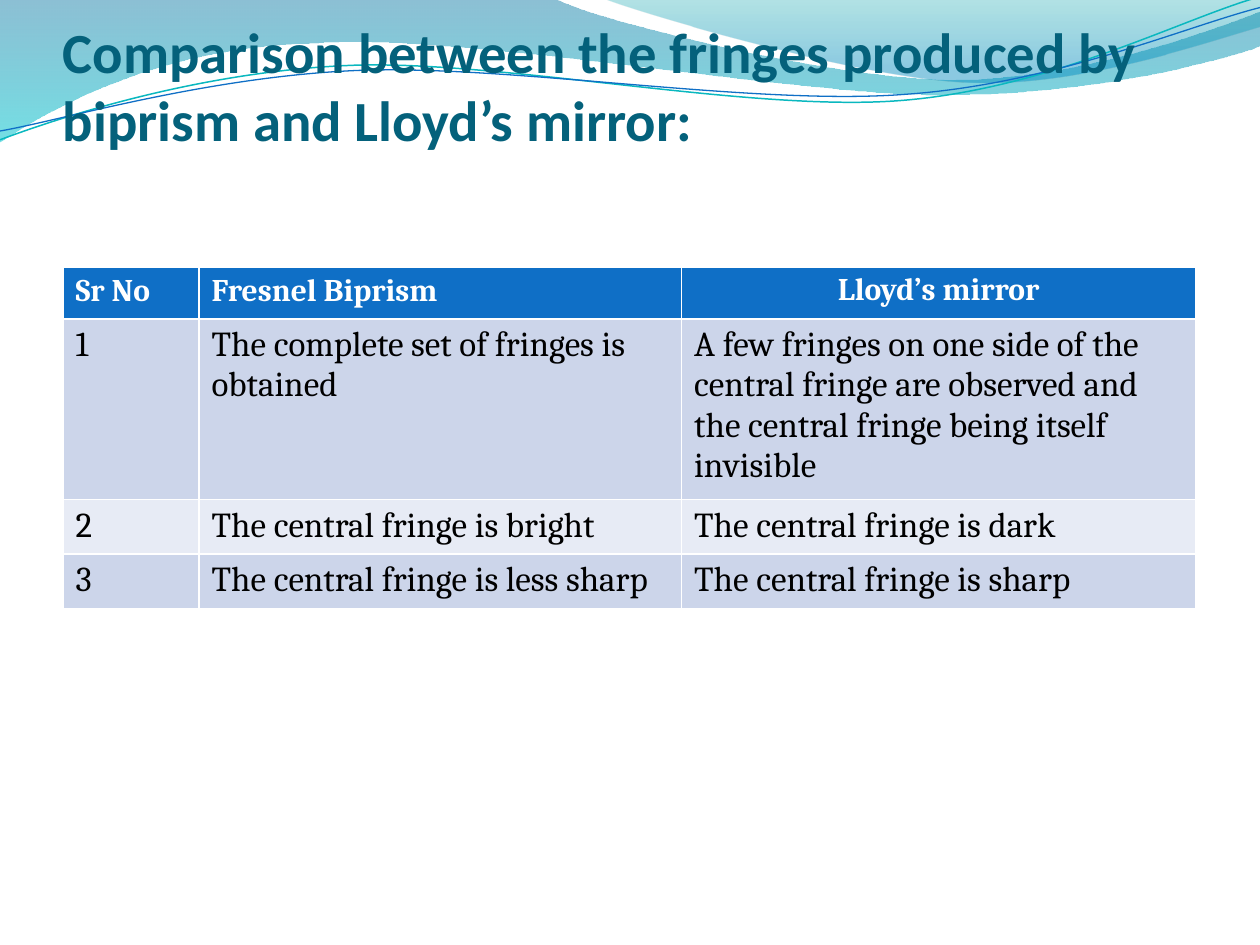
from lxml import etree
from pptx import Presentation
from pptx.dml.color import RGBColor
from pptx.enum.text import MSO_ANCHOR, PP_ALIGN
from pptx.oxml.ns import qn
from pptx.util import Inches, Pt

TOP = MSO_ANCHOR.TOP
CENTER = PP_ALIGN.CENTER

COLORS = {
    "title": "04617B", "header": "0F6FC6", "band_dark": "CCD5EA",
    "band_light": "E7EBF5", "white": "FFFFFF", "black": "000000",
    "teal_line": "0AB8BF", "blue_line": "0F6FC6",
    "left_top": "0074A1", "left_bottom": "00C6CF",
    "right_top": "00A1A9", "right_bottom": "008BBF",
}

# Waves: a start point, then line targets (2 numbers) or Bezier curves (6 numbers)
LEFT_WAVE = [
    (0, 0), (4.4, -0.01), (4.76, 0.17, 6.64, 0.63, 7.58, 0.63),
    (8.53, 0.63, 9.58, 0.26, 10, 0.09), (10.01, 0.36),
    (9.83, 0.44, 8.7, 0.76, 7.46, 0.75), (6.22, 0.75, 3.82, 0.28, 2.57, 0.34),
    (1.29, 0.36, 0.46, 0.83, -0.01, 1.13), (0, 0),
]
RIGHT_WAVE = [
    (4.79, -0.01), (5.09, 0.11, 6.82, 0.62, 7.69, 0.65),
    (8.56, 0.69, 9.61, 0.32, 10, 0.21), (10, 0), (4.79, -0.01),
]
TEAL_CURVE = [
    (0, 1.11), (0.48, 0.93, 1.58, 0.57, 2.77, 0.52),
    (3.95, 0.47, 5.93, 0.89, 7.13, 0.8), (8.33, 0.71, 9.38, 0.15, 9.98, -0.02),
]
BLUE_CURVE = [
    (0, 1.04), (0.47, 0.96, 1.64, 0.61, 2.83, 0.56),
    (4.03, 0.51, 5.97, 0.84, 7.17, 0.75), (8.36, 0.67, 9.41, 0.21, 10, 0.06),
]

TITLE = "Comparison between the fringes produced by biprism and Lloyd’s mirror:"
ROWS = [
    ("Sr No", "Fresnel Biprism", "Lloyd’s mirror"),
    ("1", "The complete set of fringes is obtained",
     "A few fringes on one side of the central fringe are observed and "
     "the central fringe being itself invisible"),
    ("2", "The central fringe is bright", "The central fringe is dark"),
    ("3", "The central fringe is less sharp", "The central fringe is sharp"),
]
COLUMN_WIDTHS = (1.08, 3.83, 4.08)


def rgb(name):
    return RGBColor.from_string(COLORS[name])


def add_outline(slide, left, top, segments, closed):
    def place(x, y):
        return left + Inches(x), top + Inches(y)

    anchors = [place(*segment[-2:]) for segment in segments]
    builder = slide.shapes.build_freeform(*anchors[0])
    builder.add_line_segments(anchors[1:], close=closed)
    outline = builder.convert_to_shape()
    outline.shadow.inherit = False
    # Bend the segments that have control points
    edges = list(outline._element.iter(qn("a:lnTo")))
    for edge, segment in zip(edges, segments[1:]):
        if len(segment) == 6:
            edge.tag = qn("a:cubicBezTo")
            for index in (0, 1):
                x, y = place(*segment[2 * index:2 * index + 2])
                control = etree.Element(qn("a:pt"), x=str(x - outline.left),
                                        y=str(y - outline.top))
                edge.insert(index, control)
    return outline


def add_wave(slide, left, top, segments, stops):
    wave = add_outline(slide, left, top, segments, True)
    wave.line.fill.background()
    wave.fill.gradient()
    wave.fill.gradient_angle = 270
    for stop, (color, position, _) in zip(wave.fill.gradient_stops, stops):
        stop.color.rgb = rgb(color)
        stop.position = position
    # Opacity in percent
    gradient = wave._element.spPr.find(qn("a:gradFill"))
    for color, (_, _, opacity) in zip(gradient.iter(qn("a:srgbClr")), stops):
        etree.SubElement(color, qn("a:alpha"), val=str(opacity * 1000))


def add_curve(slide, left, top, segments, color, width):
    curve = add_outline(slide, left, top, segments, False)
    curve.fill.background()
    curve.line.color.rgb = rgb(color)
    curve.line.width = Pt(width)


def add_wave_header(slide, left, top):
    add_wave(slide, left, top, LEFT_WAVE,
             [("left_top", 0, 45), ("left_bottom", 1, 55)])
    add_wave(slide, left, top, RIGHT_WAVE,
             [("right_top", 0, 30), ("right_bottom", 0.8, 45)])
    add_curve(slide, left, top, TEAL_CURVE, "teal_line", 0.85)
    add_curve(slide, left, top, BLUE_CURVE, "blue_line", 0.75)


def style_font(paragraph, name, size, color, bold):
    font = paragraph.font
    font.name, font.size, font.bold = name, Pt(size), bold
    font.color.rgb = rgb(color)


def add_title(slide, left, top, width, height):
    frame = slide.shapes.add_textbox(left, top, width, height).text_frame
    frame.word_wrap = True
    frame.vertical_anchor = TOP
    frame.margin_left = frame.margin_right = frame.margin_bottom = 0
    frame.margin_top = Inches(0.13)
    frame.text = TITLE
    style_font(frame.paragraphs[0], "Calibri", 32.4, "title", True)


def add_comparison(slide, left, top, width, height, row_height):
    comparison = slide.shapes.add_table(len(ROWS), len(COLUMN_WIDTHS), left, top,
                                        width, row_height * len(ROWS))
    comparison.height = height
    table = comparison.table
    for column, column_width in zip(table.columns, COLUMN_WIDTHS):
        column.width = Inches(column_width)
    # White rules come from the table style
    for r, row in enumerate(ROWS):
        is_header = r == 0
        band = "header" if is_header else "band_dark" if r % 2 else "band_light"
        for c, text in enumerate(row):
            cell = table.cell(r, c)
            cell.text = text
            cell.fill.solid()
            cell.fill.fore_color.rgb = rgb(band)
            style_font(cell.text_frame.paragraphs[0], "Cambria",
                       18 if is_header else 20,
                       "white" if is_header else "black", is_header)
    # The last heading is centred and sits tight in its cell
    mirror_heading = table.cell(0, 2)
    mirror_heading.margin_left = mirror_heading.margin_right = Inches(0.07)
    mirror_heading.margin_top = mirror_heading.margin_bottom = 0
    paragraph = mirror_heading.text_frame.paragraphs[0]
    paragraph.alignment = CENTER
    paragraph.line_spacing = 1.15


def main():
    presentation = Presentation()
    presentation.slide_width = Inches(10)
    presentation.slide_height = Inches(7.5)
    slide = presentation.slides.add_slide(presentation.slide_layouts[6])
    add_wave_header(slide, Inches(0), Inches(0))
    add_title(slide, Inches(0.5), Inches(0), Inches(9), Inches(1.75))
    add_comparison(slide, Inches(0.5), Inches(2.12), Inches(9), Inches(2.71),
                   Inches(0.41))
    presentation.save("out.pptx")


if __name__ == "__main__":
    main()
